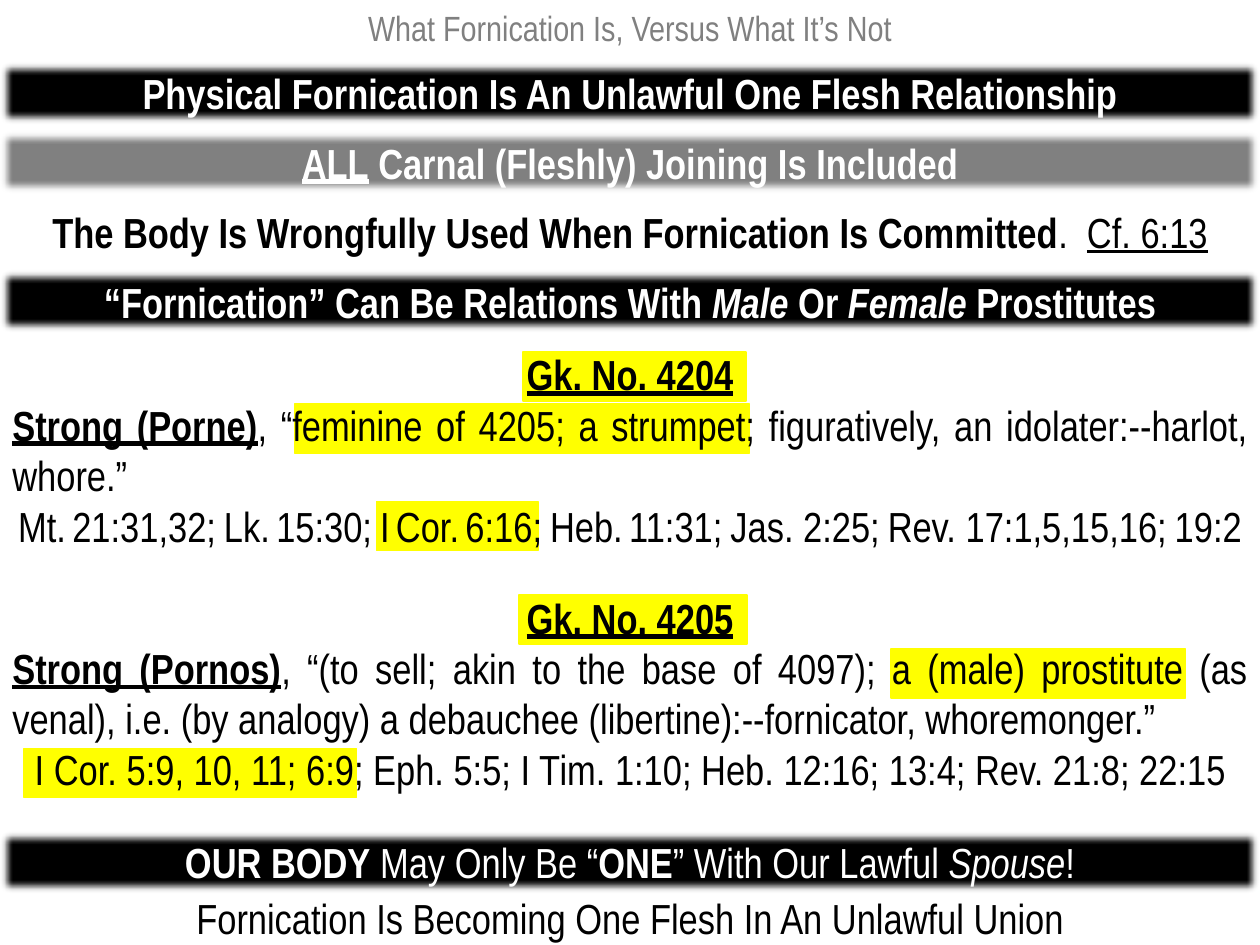
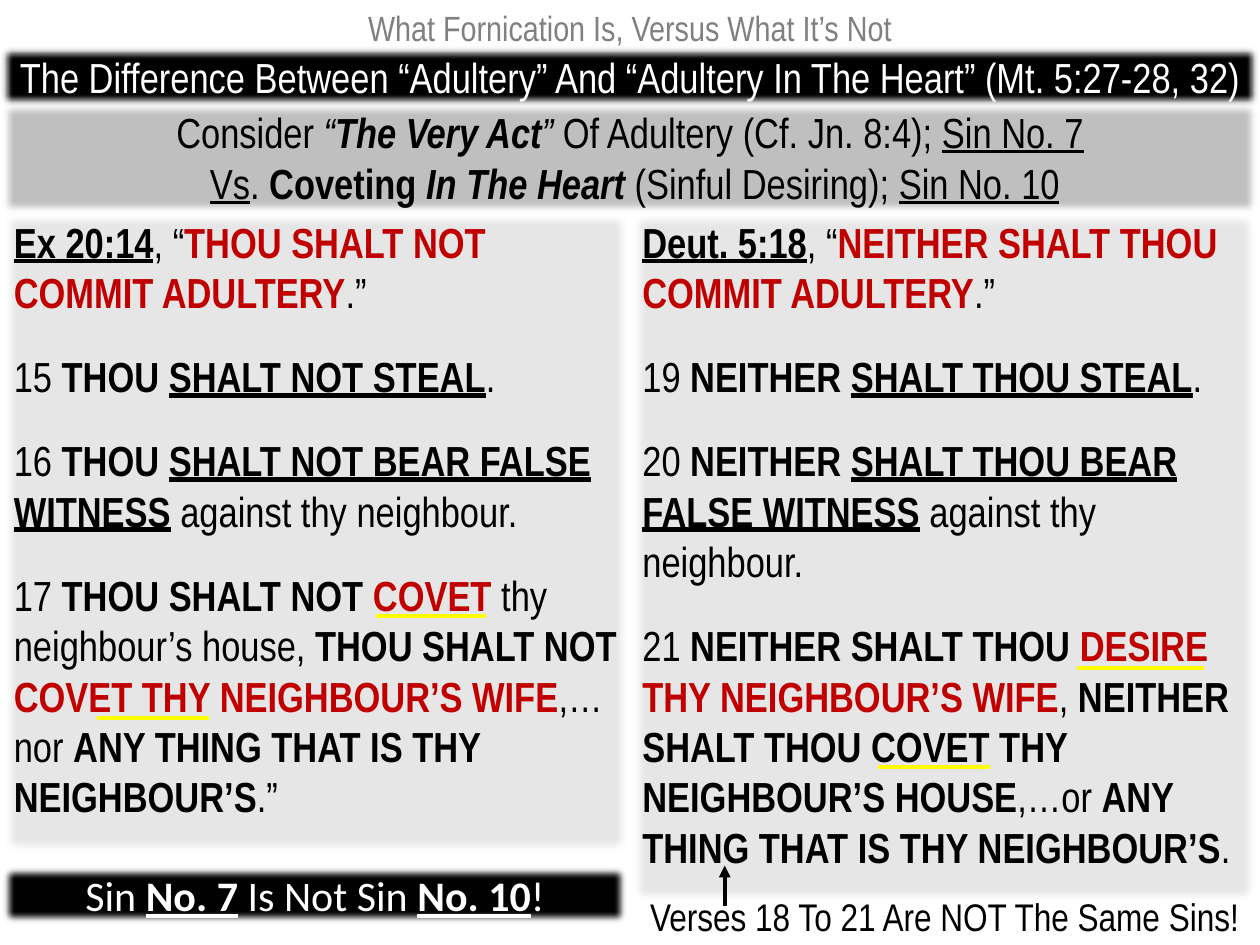
import pptx
import pptx.util
import pptx.dml.color
import pptx.enum.dml
import pptx.enum.shapes
import pptx.enum.text
import pptx.oxml
import lxml.etree
from pptx.util import Cm, Pt

RGBColor = pptx.dml.color.RGBColor
BLACK = RGBColor(0x00, 0x00, 0x00)
WHITE = RGBColor(0xFF, 0xFF, 0xFF)
GRAY = RGBColor(0x80, 0x80, 0x80)
SILVER = RGBColor(0xBF, 0xBF, 0xBF)
PALE = RGBColor(0xE7, 0xE6, 0xE6)
YELLOW = RGBColor(0xFF, 0xFF, 0x00)
RED = RGBColor(0xC0, 0x00, 0x00)

FONT = "Arial Narrow"
SLIDE_WIDTH, SLIDE_HEIGHT = 25.4, 19.05
BAND_HEIGHT = 1.27
ALIGN = pptx.enum.text.PP_ALIGN
CENTER, JUSTIFY, LEFT = ALIGN.CENTER, ALIGN.JUSTIFY, ALIGN.LEFT
DRAWING = "http://schemas.openxmlformats.org/drawingml/2006/main"

# Content. A run is (text, style) or (text, style, size);
# style letters: b bold, i italic, u underline, r red.
TITLE = "What Fornication Is, Versus What It’s Not"

# Rows at the top of slide 1: fill (None for plain text) and runs
TOP_ROWS = [
    (BLACK, [("Physical Fornication Is An Unlawful One Flesh Relationship", "b")]),
    (GRAY, [("ALL", "bu"), (" Carnal (Fleshly) Joining Is Included", "b")]),
    (None, [("The Body Is Wrongfully Used When Fornication Is Committed", "b"),
            (".  ", ""), ("Cf. 6:13", "u")]),
    (BLACK, [("“Fornication” Can Be Relations With ", "b"), ("Male", "bi"), (" Or ", "b"),
             ("Female", "bi"), (" Prostitutes", "b")]),
]
SPOUSE = [("OUR BODY", "b"), (" May Only Be “", ""), ("ONE", "b"),
          ("” With Our Lawful ", ""), ("Spouse", "i"), ("!", "")]
UNION = [("Fornication Is Becoming One Flesh In An Unlawful Union", "")]

# Citations with the size of the spaces inside them
CITATIONS_4204 = [("Mt. 21:31,32;", 16), ("Lk. 15:30;", 16), ("I Cor. 6:16;", 16),
                  ("Heb. 11:31;", 16), ("Jas. 2:25;", 24), ("Rev. 17:1,5,15,16;", 24),
                  ("19:2", 24)]
CITATION_GAP = 20
CITATIONS_4205 = [("I Cor. 5:9, 10, 11; 6:9; Eph. 5:5; I Tim. 1:10; Heb. 12:16; 13:4; "
                   "Rev. 21:8; 22:15", "")]
DEFINITION_4204 = [("Strong (Porne)", "bu"),
                   (", “feminine of 4205; a strumpet; figuratively, an idolater:"
                    "--harlot, whore.”", "")]
DEFINITION_4205 = [("Strong (Pornos)", "bu"),
                   (", “(to sell; akin to the base of 4097); a (male) prostitute (as venal), "
                    "i.e. (by analogy) a debauchee (libertine):--fornicator, whoremonger.”", "")]
# Left, top, width in cm
HIGHLIGHTS = [(5.94, 8.15, 9.17), (10.54, 7.09, 4.5), (17.96, 13.08, 5.94),
              (10.46, 11.99, 4.6), (0.48, 15.09, 6.71), (7.59, 10.11, 3.25)]

DIFFERENCE = [("The Difference Between “Adultery” And “Adultery In The Heart” "
               "(Mt. 5:27-28, 32)", "")]
CONSIDER = [
    [("Consider ", ""), ("“", "i"), ("The Very Act", "bi"), ("”", "i"),
     (" Of Adultery (Cf. Jn. 8:4); ", ""), ("Sin No. 7", "u")],
    [(" ", ""), ("Vs", "u"), (". ", ""), ("Coveting ", "b"), ("In The Heart ", "bi"),
     ("(Sinful Desiring); ", ""), ("Sin No. 10", "u")],
]
EXODUS = [
    [("Ex 20:14", "bu"), (", “", ""), ("THOU SHALT NOT COMMIT ADULTERY", "br"), (".”", "")],
    [("15 ", ""), ("THOU ", "b"), ("SHALT NOT STEAL", "bu"), (".", "")],
    [("16 ", ""), ("THOU ", "b"), ("SHALT NOT BEAR FALSE WITNESS", "bu"),
     (" against thy neighbour.", "")],
    [("17 ", ""), ("THOU SHALT NOT ", "b"), ("COVET ", "br"), ("thy neighbour’s house, ", ""),
     ("THOU SHALT NOT", "b"), (" COVET THY NEIGHBOUR’S WIFE", "br"), (",…nor ", ""),
     ("ANY THING THAT IS THY NEIGHBOUR’S", "b"), (".”", "")],
]
DEUTERONOMY = [
    [("Deut. 5:18", "bu"), (", “", ""), ("NEITHER SHALT THOU COMMIT ADULTERY", "br"),
     (".”", "")],
    [("19 ", ""), ("NEITHER ", "b"), ("SHALT THOU STEAL", "bu"), (".", "")],
    [("20 ", ""), ("NEITHER ", "b"), ("SHALT THOU BEAR FALSE WITNESS", "bu"),
     (" against thy neighbour.", "")],
    [("21 ", ""), ("NEITHER SHALT THOU ", "b"), ("DESIRE THY NEIGHBOUR’S WIFE", "br"),
     (", ", ""), ("NEITHER SHALT THOU COVET THY NEIGHBOUR’S HOUSE", "b"), (",…or ", ""),
     ("ANY THING THAT IS THY NEIGHBOUR’S", "b"), (".", "")],
]
SINS = [("Sin ", ""), ("No. 7", "bu"), (" ", "b"), ("Is Not Sin ", ""),
        ("No. 10", "bu"), ("!", "")]
CAPTION = [("Verses 18 To 21 Are NOT The Same Sins!", "")]
# Left end, right end, height in cm
UNDERLINES = [(7.57, 9.8, 12.42), (21.72, 24.28, 13.46),
              (1.96, 4.22, 14.48), (17.7, 19.96, 15.47)]


def citation_runs(citations):
    """Set citations tightly, with smaller spaces in and between them."""
    runs = []
    for index, (citation, inner_size) in enumerate(citations):
        if index:
            runs.append((" ", "", CITATION_GAP))
        words = [citation] if inner_size == 24 else citation.split()
        for position, word in enumerate(words):
            if position:
                runs.append((" ", "", inner_size))
            runs.append((word, ""))
    return runs


def write(shape, paragraphs, color=BLACK, size=24, font=FONT, align=CENTER, gap=0):
    frame = shape.text_frame
    frame.word_wrap = True
    frame.auto_size = pptx.enum.text.MSO_AUTO_SIZE.NONE
    frame.vertical_anchor = pptx.enum.text.MSO_ANCHOR.TOP
    for index, runs in enumerate(paragraphs):
        paragraph = frame.add_paragraph() if index else frame.paragraphs[0]
        paragraph.alignment = align[index] if isinstance(align, list) else align
        paragraph.space_before = Pt(gap if index else 0)
        paragraph.font.name, paragraph.font.size = font, Pt(size)
        paragraph.font.color.rgb = color
        for text, style, *run_size in runs:
            run = paragraph.add_run()
            run.text = text
            if "b" in style:
                run.font.bold = True
            if "i" in style:
                run.font.italic = True
            if "u" in style:
                run.font.underline = True
            if "r" in style:
                run.font.color.rgb = RED
            if run_size:
                run.font.size = Pt(run_size[0])


def add_rectangle(slide, left, top, width, height, fill):
    shape = slide.shapes.add_shape(pptx.enum.shapes.MSO_SHAPE.RECTANGLE,
                                   Cm(left), Cm(top), Cm(width), Cm(height))
    shape.shadow.inherit = False
    shape.fill.solid()
    shape.fill.fore_color.rgb = fill
    shape.line.fill.background()
    return shape


def add_soft_box(slide, left, top, width, height, fill, paragraphs, **text_options):
    shape = add_rectangle(slide, left, top, width, height, fill)
    effects = shape.element.spPr.find(f"{{{DRAWING}}}effectLst")
    lxml.etree.SubElement(effects, f"{{{DRAWING}}}softEdge", rad=str(Pt(5)))
    write(shape, paragraphs, **text_options)


def add_text(slide, left, top, width, height, paragraphs, **text_options):
    box = slide.shapes.add_textbox(Cm(left), Cm(top), Cm(width), Cm(height))
    write(box, paragraphs, **text_options)


def add_line(slide, start, end, color):
    line = slide.shapes.add_connector(pptx.enum.shapes.MSO_CONNECTOR.STRAIGHT,
                                      Cm(start[0]), Cm(start[1]), Cm(end[0]), Cm(end[1]))
    line.line.color.rgb = color
    line.line.width = Pt(2.25)
    lxml.etree.SubElement(line.element.spPr, f"{{{DRAWING}}}effectLst")
    return line


def add_titled_slide(presentation):
    slide = presentation.slides.add_slide(presentation.slide_layouts[5])
    title = slide.shapes.title
    title.left, title.top = Cm(0), Cm(0)
    title.width, title.height = Cm(SLIDE_WIDTH), Cm(1.11)
    write(title, [[(TITLE, "")]], color=GRAY, size=20)
    return slide


def build_definitions(presentation):
    slide = add_titled_slide(presentation)

    # Highlights behind the text
    for left, top, width in HIGHLIGHTS:
        highlight = add_rectangle(slide, left, top, width, 0.99, YELLOW)
        highlight.line.color.rgb = YELLOW
        highlight.line.width = Pt(1)

    # Evenly spaced rows
    for index, (fill, runs) in enumerate(TOP_ROWS):
        place = (0, 1.24 + 1.4 * index, SLIDE_WIDTH, BAND_HEIGHT)
        if fill is None:
            add_text(slide, *place, [runs])
        else:
            add_soft_box(slide, *place, fill, [runs], color=WHITE)

    # Dictionary entries
    entries = [(6.91, "Gk. No. 4204", DEFINITION_4204, citation_runs(CITATIONS_4204)),
               (11.81, "Gk. No. 4205", DEFINITION_4205, CITATIONS_4205)]
    for top, number, definition, citations in entries:
        add_text(slide, 0, top, SLIDE_WIDTH, 4.37,
                 [[(number, "bu")], definition, citations], align=[CENTER, JUSTIFY, CENTER])

    # Conclusion
    add_soft_box(slide, 0, 16.74, SLIDE_WIDTH, BAND_HEIGHT, BLACK, [SPOUSE], color=WHITE)
    add_text(slide, 0, 17.86, SLIDE_WIDTH, BAND_HEIGHT, [UNION])


def build_comparison(presentation):
    slide = add_titled_slide(presentation)
    half = SLIDE_WIDTH / 2

    # Headings and the two columns of verses
    add_soft_box(slide, 0, 2.03, SLIDE_WIDTH, 2.31, SILVER, CONSIDER)
    for left, height, verses in [(0.03, 13, EXODUS), (half, 14.02, DEUTERONOMY)]:
        add_soft_box(slide, left, 4.24, half, height, PALE, verses, align=LEFT, gap=19.2)
    add_soft_box(slide, 0, 0.91, SLIDE_WIDTH, BAND_HEIGHT, BLACK, [DIFFERENCE], color=WHITE)
    add_soft_box(slide, 0, 17.4, half, BAND_HEIGHT, BLACK, [SINS], color=WHITE, font="Calibri")

    # Underlines below the key words
    for left, right, height in UNDERLINES:
        add_line(slide, (left, height), (right, height), YELLOW)

    # Caption and its arrow
    add_text(slide, 12.73, 17.88, 12.62, 1.19, [CAPTION], size=22)
    arrow = add_line(slide, (14.61, 18.26), (14.61, 17.45), BLACK)
    lxml.etree.SubElement(arrow.line._get_or_add_ln(), f"{{{DRAWING}}}tailEnd", type="triangle")


def main():
    presentation = pptx.Presentation()
    presentation.slide_width = Cm(SLIDE_WIDTH)
    presentation.slide_height = Cm(SLIDE_HEIGHT)
    build_definitions(presentation)
    build_comparison(presentation)
    presentation.save("out.pptx")


if __name__ == "__main__":
    main()
